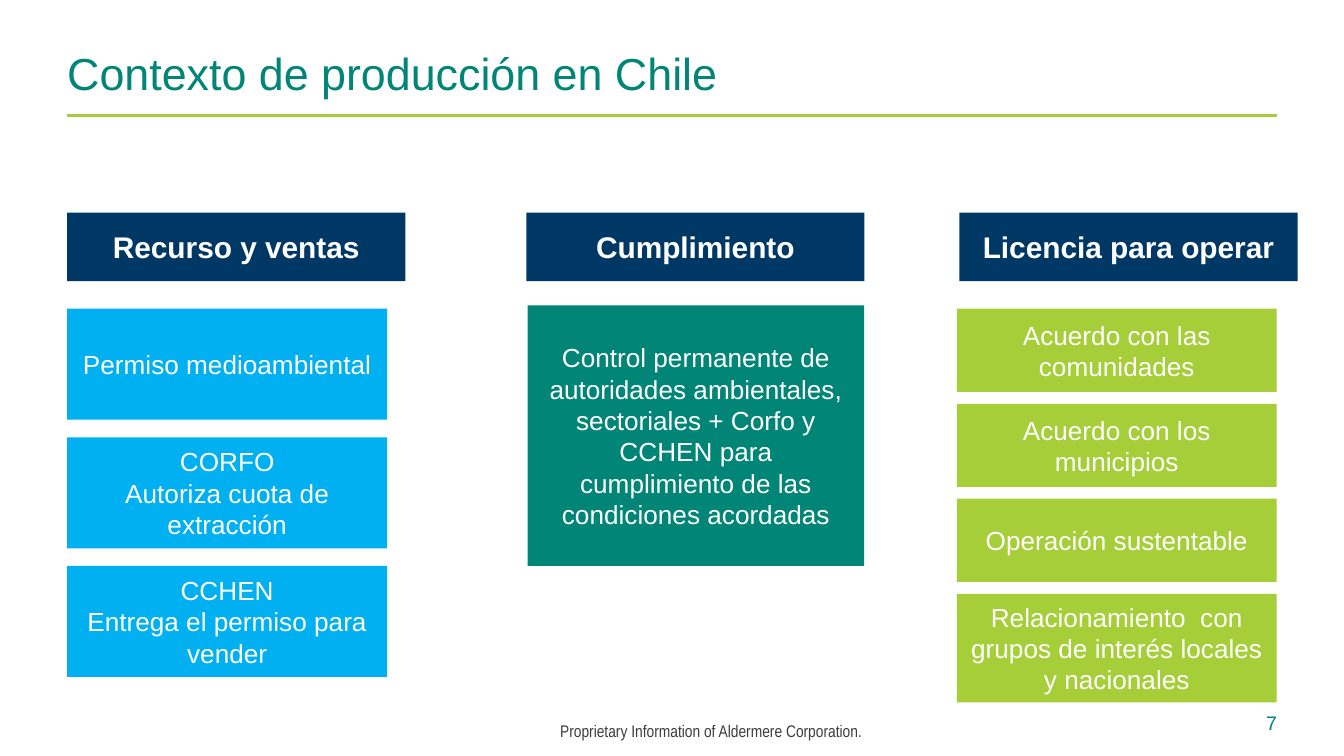
from dataclasses import dataclass

from lxml import etree
from pptx import Presentation
from pptx.dml.color import RGBColor
from pptx.enum.shapes import MSO_CONNECTOR, MSO_SHAPE
from pptx.enum.text import MSO_ANCHOR, PP_ALIGN
from pptx.oxml.ns import qn
from pptx.util import Pt

LEFT, CENTER, RIGHT = PP_ALIGN.LEFT, PP_ALIGN.CENTER, PP_ALIGN.RIGHT
TOP, MIDDLE, BOTTOM = MSO_ANCHOR.TOP, MSO_ANCHOR.MIDDLE, MSO_ANCHOR.BOTTOM
RECTANGLE, STRAIGHT = MSO_SHAPE.RECTANGLE, MSO_CONNECTOR.STRAIGHT


@dataclass(frozen=True)
class Theme:
    white: str = "FFFFFF"
    teal: str = "008576"
    navy: str = "003865"
    sky: str = "00B0F0"
    lime: str = "A6CE39"
    gray: str = "3C3C3C"
    font: str = "Arial"
    narrow_font: str = "Arial Narrow"
    title_size: float = 24
    header_size: float = 16
    body_size: float = 14
    number_size: float = 10.5
    footer_size: float = 9


def write(frame, text, *, size, color, font, bold=False, align=LEFT, anchor=TOP,
          inset=(7.2, 3.6)):
    frame.word_wrap = True
    frame.vertical_anchor = anchor
    frame.margin_left = frame.margin_right = Pt(inset[0])
    frame.margin_top = frame.margin_bottom = Pt(inset[1])
    para = frame.paragraphs[0]
    para.alignment = align
    for index, line in enumerate(text.split("\n")):
        if index:
            para.add_line_break()
        span = para.add_run()
        span.text = line
        span.font.name = font
        span.font.size = Pt(size)
        span.font.bold = bold
        span.font.color.rgb = RGBColor.from_string(color)


class SlideBuilder:
    def __init__(self, slide, theme):
        self.slide = slide
        self.theme = theme

    def title(self, text, left, top, width, height):
        title = self.slide.shapes.title
        title.left, title.top = Pt(left), Pt(top)
        title.width, title.height = Pt(width), Pt(height)
        write(title.text_frame, text, size=self.theme.title_size, color=self.theme.teal,
              font=self.theme.font, anchor=BOTTOM, inset=(0, 0))

    def rule(self, left, right, y, color, weight):
        line = self.slide.shapes.add_connector(STRAIGHT, Pt(left), Pt(y), Pt(right), Pt(y))
        line.line.color.rgb = RGBColor.from_string(color)
        line.line.width = Pt(weight)
        etree.SubElement(line._element.spPr, qn("a:effectLst"))

    def label(self, text, left, top, width, height, **style):
        box = self.slide.shapes.add_textbox(Pt(left), Pt(top), Pt(width), Pt(height))
        write(box.text_frame, text, **style)

    def block(self, text, left, top, width, height, fill, size, bold=False):
        box = self.slide.shapes.add_shape(RECTANGLE, Pt(left), Pt(top), Pt(width), Pt(height))
        box.shadow.inherit = False
        box.fill.solid()
        box.fill.fore_color.rgb = RGBColor.from_string(fill)
        box.line.fill.background()
        write(box.text_frame, text, size=size, color=self.theme.white, font=self.theme.font,
              bold=bold, align=CENTER, anchor=MIDDLE)

    def header(self, text, left):
        self.block(text, left, 113.9, 181.2, 36.7, self.theme.navy,
                   self.theme.header_size, bold=True)

    def stack(self, texts, left, top, width, heights, gap, fill):
        for text, height in zip(texts, heights):
            self.block(text, left, top, width, height, fill, self.theme.body_size)
            top += height + gap


def main():
    theme = Theme()
    deck = Presentation()
    deck.slide_width, deck.slide_height = Pt(720), Pt(405)
    page = SlideBuilder(deck.slides.add_slide(deck.slide_layouts[5]), theme)

    page.title("Contexto de producción en Chile", 36, 8.6, 648, 44.6)
    page.rule(36, 684, 61.9, theme.lime, 1.5)

    page.header("Recurso y ventas", 36)
    page.stack(["Permiso medioambiental",
                "CORFO\nAutoriza cuota de extracción",
                "CCHEN\nEntrega el permiso para vender"],
               36, 165.4, 171.4, [59.5] * 3, 9.4, theme.sky)

    page.header("Cumplimiento", 282)
    page.stack(["Control permanente de autoridades ambientales, sectoriales + Corfo y "
                "CCHEN para cumplimiento de las condiciones acordadas"],
               282.7, 163.6, 180.2, [139.7], 0, theme.teal)

    page.header("Licencia para operar", 514)
    page.stack(["Acuerdo con las comunidades",
                "Acuerdo con los municipios",
                "Operación sustentable",
                "Relacionamiento  con grupos de interés locales y nacionales"],
               512.6, 165.4, 171.4, [44.6] * 3 + [58.2], 6.3, theme.lime)

    page.label("Proprietary Information of Aldermere Corporation.", 293, 382.3, 180, 18,
               size=theme.footer_size, color=theme.gray, font=theme.narrow_font)
    page.label("7", 655.9, 376.2, 28.1, 21.6, size=theme.number_size, color=theme.teal,
               font=theme.font, align=RIGHT, anchor=MIDDLE, inset=(0, 0))

    deck.save("out.pptx")


if __name__ == "__main__":
    main()
